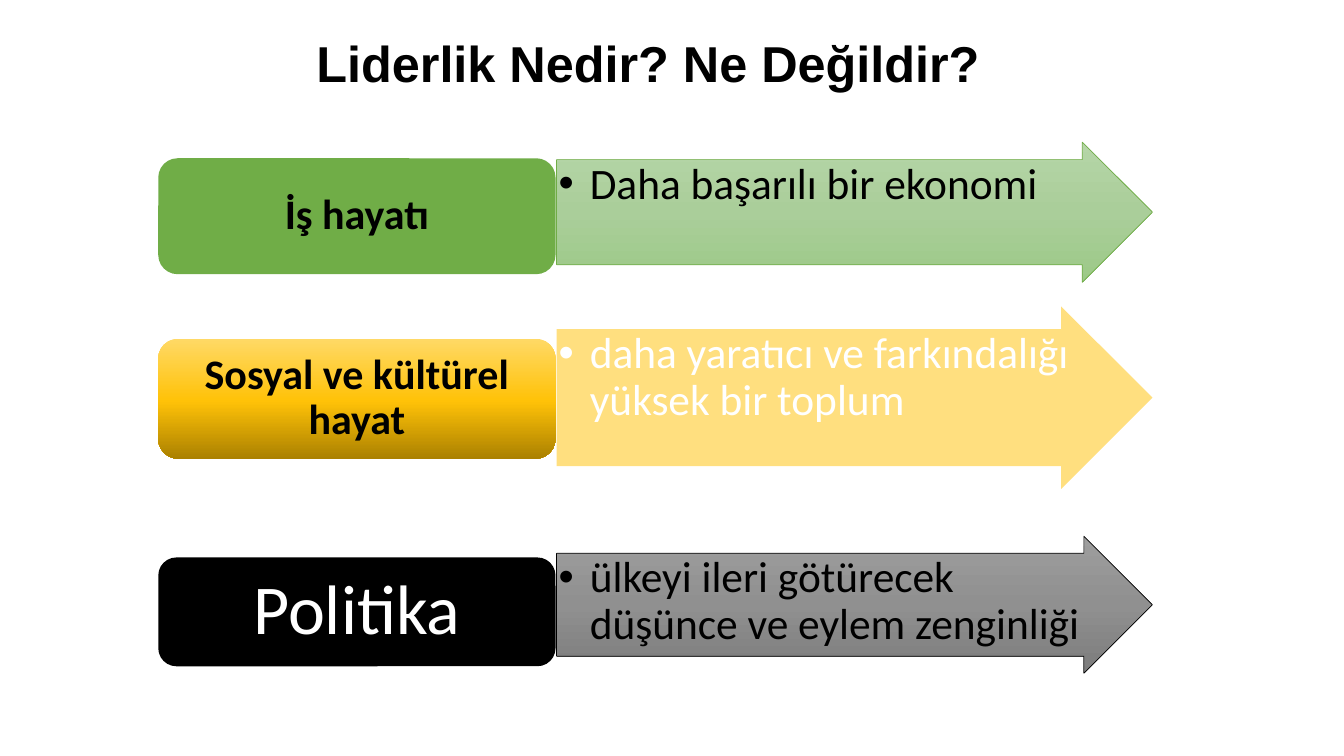
from dataclasses import dataclass

from lxml import etree
from pptx import Presentation
from pptx import util as u
from pptx.dml.color import RGBColor
from pptx.enum import shapes, text
from pptx.oxml.ns import qn


@dataclass(frozen=True)
class Theme:
    head: str = "Arial"
    body: str = "Calibri"
    black: str = "000000"
    white: str = "FFFFFF"
    green: str = "70AD47"
    gold: str = "FFC000"
    mint: tuple = ((0, "B5D5A7"), (50, "AACE9A"), (100, "9CC987"))
    amber: tuple = ((0, "FFD966"), (52, "FFC208"), (100, "AB8100"))
    gray: tuple = ((0, "9D9D9D"), (50, "909090"), (100, "7C7C7C"))
    title: int = 36
    point: int = 31
    label: int = 30
    large: int = 50


T = Theme()
LEFT, MID = 1.57, 5.52
LABEL_W, ARROW_W = 3.94, 5.91


def paint(shape, color, alpha=None):
    """Fill with one colour, or top to bottom with a tuple of stops."""
    fill = shape.fill
    if isinstance(color, str):
        fill.solid()
        fill.fore_color.rgb = RGBColor.from_string(color)
        if alpha:
            tone = shape._element.spPr.find(".//" + qn("a:srgbClr"))
            etree.SubElement(tone, qn("a:alpha"), val=str(alpha * 1000))
        return
    fill.gradient()
    fill.gradient_angle = 270
    stops = shape._element.spPr.find(".//" + qn("a:gsLst"))
    for old in list(stops):
        stops.remove(old)
    for pos, tone in color:
        stop = etree.SubElement(stops, qn("a:gs"), pos=str(pos * 1000))
        etree.SubElement(stop, qn("a:srgbClr"), val=tone)


def add_box(slide, kind, box, color, alpha=None, edge=None):
    shape = slide.shapes.add_shape(kind, *map(u.Inches, box))
    shape.shadow.inherit = False
    paint(shape, color, alpha)
    if edge:
        shape.line.color.rgb = RGBColor.from_string(edge)
        shape.line.width = u.Pt(0.5)
    else:
        shape.line.fill.background()
    return shape


def set_frame(shape, anchor, side, end):
    frame = shape.text_frame
    frame.word_wrap = True
    frame.vertical_anchor = anchor
    frame.margin_left = frame.margin_right = u.Inches(side)
    frame.margin_top = frame.margin_bottom = u.Inches(end)
    return frame.paragraphs[0]


def add_run(para, words, size, color, font=T.body, bold=False):
    run = para.add_run()
    run.text = words
    run.font.name = font
    run.font.size = u.Pt(size)
    run.font.bold = bold
    run.font.color.rgb = RGBColor.from_string(color)


def indent(para, left, first=0):
    props = para._p.get_or_add_pPr()
    props.set("marL", str(u.Inches(left)))
    props.set("indent", str(u.Inches(first)))
    return props


def add_title(slide, words):
    box = slide.shapes.add_textbox(*map(u.Inches, (2.92, 0.27, 7.2, 0.71)))
    box.text_frame.word_wrap = True
    box.text_frame.auto_size = text.MSO_AUTO_SIZE.SHAPE_TO_FIT_TEXT
    para = box.text_frame.paragraphs[0]
    indent(para, 0.12)
    add_run(para, words, T.title, T.black, T.head, True)


def add_arrow(slide, top, high, words, ink, color, alpha=None, edge=None):
    arrow = add_box(slide, shapes.MSO_SHAPE.RIGHT_ARROW,
                    (MID, top, ARROW_W, high), color, alpha, edge)
    arrow.adjustments[0], arrow.adjustments[1] = 0.75, 0.5
    para = set_frame(arrow, text.MSO_ANCHOR.TOP, 0.02, 0.02)
    props = indent(para, 0.31, -0.31)
    etree.SubElement(props, qn("a:buFont"), typeface=T.head)
    etree.SubElement(props, qn("a:buChar"), char="•")
    para.alignment = text.PP_ALIGN.LEFT
    para.line_spacing = 0.9
    add_run(para, words, T.point, ink)


def add_label(slide, top, high, words, ink, color, size=T.label,
              bold=True, pad=0.12):
    label = add_box(slide, shapes.MSO_SHAPE.ROUNDED_RECTANGLE,
                    (LEFT, top, LABEL_W, high), color)
    para = set_frame(label, text.MSO_ANCHOR.MIDDLE, pad, pad / 2)
    para.alignment = text.PP_ALIGN.CENTER
    para.line_spacing = 0.9
    add_run(para, words, size, ink, bold=bold)


def main():
    deck = Presentation()
    deck.slide_width, deck.slide_height = u.Inches(13.33), u.Inches(7.5)
    slide = deck.slides.add_slide(deck.slide_layouts[6])
    add_title(slide, "Liderlik Nedir? Ne Değildir?")

    # Business life
    add_arrow(slide, 1.41, 1.39, "Daha başarılı bir ekonomi",
              T.black, T.mint, edge=T.green)
    add_label(slide, 1.57, 1.15, "İş hayatı", T.black, T.green)

    # Social and cultural life
    add_arrow(slide, 3.04, 1.81,
              "daha yaratıcı ve farkındalığı yüksek bir toplum",
              T.white, T.gold, alpha=50)
    add_label(slide, 3.36, 1.19, "Sosyal ve kültürel hayat",
              T.black, T.amber)

    # Politics
    add_arrow(slide, 5.32, 1.36,
              "ülkeyi ileri götürecek düşünce ve eylem zenginliği",
              T.black, T.gray, edge=T.black)
    add_label(slide, 5.53, 1.08, "Politika", T.white, T.black,
              T.large, bold=False, pad=0.2)

    deck.save("out.pptx")


if __name__ == "__main__":
    main()
